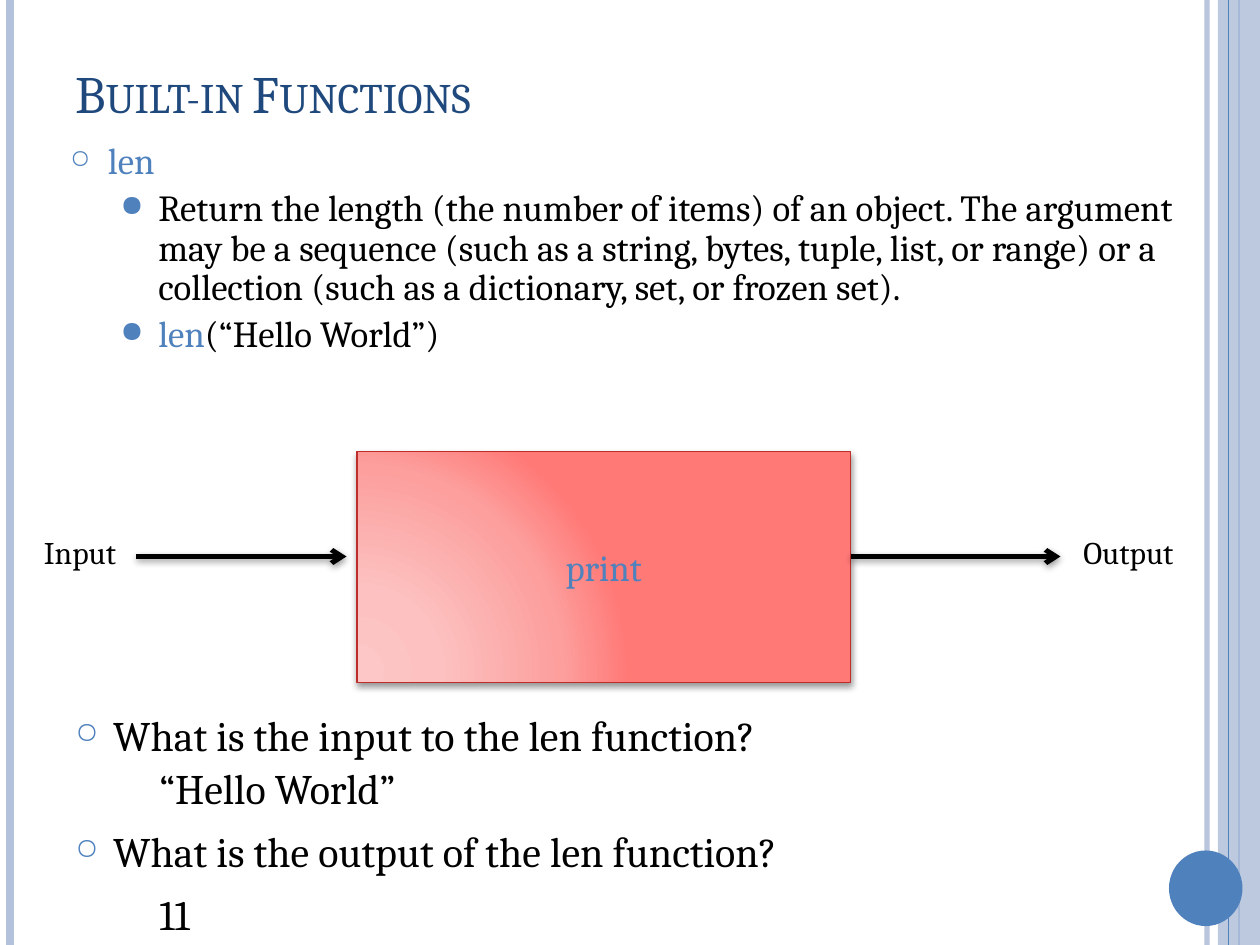
import pptx
import pptx.util
import pptx.dml.color
import pptx.enum.shapes
import pptx.enum.text
import pptx.oxml
import pptx.oxml.ns

Pt = pptx.util.Pt
SHAPES = pptx.enum.shapes.MSO_SHAPE
ANCHOR = pptx.enum.text.MSO_ANCHOR
ALIGN = pptx.enum.text.PP_ALIGN
AUTO_SIZE = pptx.enum.text.MSO_AUTO_SIZE

THEME = {
    "font": "Cambria",
    "title": "1F497D", "accent": "4F81BD", "stripe": "B3C1DB", "text": "000000",
    "box_line": "BD2D29",
    "box_stops": [(0, "FCC7C6"), (30, "FCC1C0"), (75, "FC9F9D"), (100, "FF7977")],
    "title_size": 30, "body_size": 21, "question_size": 24, "label_size": 18,
}
WIDTH, HEIGHT = 720, 540

# Content: a paragraph is (kind, [(text, colour), ...])
TITLE = "Built-in Functions"
BODY = [
    ("topic", [("len", "accent")]),
    ("detail", [("Return the length (the number of items) of an object. The argument "
                 "may be a sequence (such as a string, bytes, tuple, list, or range) or a "
                 "collection (such as a dictionary, set, or frozen set).", "text")]),
    ("detail", [("len", "accent"), ("(“Hello World”)", "text")]),
]
BOX_LABEL = "print"
QUESTIONS = [  # question, top, answer, top, answer width
    ("What is the input to the len function?", 402, "“Hello World”", 432, 252),
    ("What is the output of the len function?", 468, "11", 504, 66),
]
LABELS = [("Input", 18), ("Output", 612)]
ARROWS = [(78, 198), (486, 606)]
ARROW_Y = 318
STRIPES = [  # x, colour, line width, opacity
    (689.75, "stripe", 3, 93), (5.75, "stripe", 4.5, 100), (708, "accent", 1.5, 100),
]

# Paragraph kinds: level, left indent, space before, bullet, bullet size
KINDS = {
    "plain": (0, 0, 0, None, 0),
    "answer": (0, 0, 6, None, 0),
    "topic": (0, 21.6, 6, "○", 70),
    "detail": (1, 50.4, 4.2, "●", 80),
}
HANGING = 21.6


def color(name):
    return pptx.dml.color.RGBColor.from_string(THEME[name])


def xml(markup):
    """Parse DrawingML whose first tag still lacks its namespace."""
    head, rest = markup.split(">", 1)
    close = "/" if head.endswith("/") else ""
    head = head.rstrip("/")
    return pptx.oxml.parse_xml(f"{head} {pptx.oxml.ns.nsdecls('a')}{close}>{rest}")


def set_values(target, values):
    for name, value in values.items():
        setattr(target, name, value)


def set_alpha(fill, percent):
    element = fill._xPr.find(".//" + pptx.oxml.ns.qn("a:srgbClr"))
    element.append(xml(f'<a:alpha val="{percent * 1000}"/>'))


def set_effects(shape, shadow=None):
    """Clear the inherited shadow, or set (opacity, blur, distance) downwards."""
    inner = ""
    if shadow:
        opacity, blur, distance = shadow
        inner = (f'<a:outerShdw blurRad="{Pt(blur)}" dist="{Pt(distance)}" dir="5400000" '
                 f'rotWithShape="0"><a:srgbClr val="{THEME["text"]}">'
                 f'<a:alpha val="{opacity * 1000}"/></a:srgbClr></a:outerShdw>')
    shape._element.spPr.append(xml(f"<a:effectLst>{inner}</a:effectLst>"))


def add_line(shapes, start, end, line_color, width, opacity=100, arrow=False, shadow=None):
    connector = shapes.add_connector(pptx.enum.shapes.MSO_CONNECTOR.STRAIGHT,
                                     *map(Pt, start + end))
    connector.line.color.rgb = color(line_color)
    connector.line.width = Pt(width)
    if opacity < 100:
        set_alpha(connector.line.fill, opacity)
    if arrow:
        connector.line._get_or_add_ln().append(xml('<a:tailEnd type="arrow"/>'))
    set_effects(connector, shadow)


def add_shape(shapes, kind, bounds, fill):
    shape = shapes.add_shape(kind, *map(Pt, bounds))
    shape.fill.solid()
    shape.fill.fore_color.rgb = color(fill)
    shape.line.fill.background()
    shape.shadow.inherit = False
    return shape


def write_text(shape, paragraphs, size, spacing=None, align=None, small_caps=False, **frame_values):
    frame = shape.text_frame
    set_values(frame, {"word_wrap": True, **frame_values})
    for index, (kind, runs) in enumerate(paragraphs):
        paragraph = frame.add_paragraph() if index else frame.paragraphs[0]
        level, left, before, bullet, bullet_size = KINDS[kind]
        set_values(paragraph, {"level": level, "alignment": align,
                               "line_spacing": spacing, "space_before": Pt(before)})
        if bullet:
            properties = paragraph._p.get_or_add_pPr()
            properties.set("marL", str(Pt(left)))
            properties.set("indent", str(Pt(-HANGING)))
            for markup in (f'<a:buClr><a:srgbClr val="{THEME["accent"]}"/></a:buClr>',
                           f'<a:buSzPct val="{bullet_size * 1000}"/>',
                           f'<a:buChar char="{bullet}"/>'):
                properties.append(xml(markup))
        for text, run_color in runs:
            run = paragraph.add_run()
            run.text = text
            set_values(run.font, {"name": THEME["font"], "size": Pt(THEME[size])})
            run.font.color.rgb = color(run_color)
            if small_caps:
                run.font._element.set("cap", "small")


def add_text(shapes, bounds, paragraphs, size, **values):
    write_text(shapes.add_textbox(*map(Pt, bounds)), paragraphs, size, **values)


def add_frame(shapes):
    for x, line_color, width, opacity in STRIPES:
        add_line(shapes, (x, 0), (x, HEIGHT), line_color, width, opacity)
    band = add_shape(shapes, SHAPES.RECTANGLE, (696, 0, 24, HEIGHT), "stripe")
    set_alpha(band.fill, 87)
    add_line(shapes, (702, 0), (702, HEIGHT), "accent", 0.75)
    add_shape(shapes, SHAPES.OVAL, (668, 486, 42, 43.2), "accent")


def add_diagram(shapes):
    box = shapes.add_shape(SHAPES.RECTANGLE, *map(Pt, (204, 258, 282, 132)))
    box.line.color.rgb = color("box_line")
    box.line.width = Pt(1)
    stops = "".join(f'<a:gs pos="{position * 1000}"><a:srgbClr val="{value}"/></a:gs>'
                    for position, value in THEME["box_stops"])
    gradient = xml(f'<a:gradFill rotWithShape="1"><a:gsLst>{stops}</a:gsLst><a:path path="circle">'
                   '<a:fillToRect l="5000" t="100000" r="120000" b="10000"/></a:path></a:gradFill>')
    box._element.spPr.insert(2, gradient)
    set_effects(box, (40, 4, 2))
    write_text(box, [("plain", [(BOX_LABEL, "accent")])], "body_size",
               align=ALIGN.CENTER, vertical_anchor=ANCHOR.MIDDLE)
    for start, end in ARROWS:
        add_line(shapes, (start, ARROW_Y), (end, ARROW_Y), "text", 2.75,
                 arrow=True, shadow=(42, 4, 1.6))
    for text, left in LABELS:
        add_text(shapes, (left, 301, 96, 29), [("plain", [(text, "text")])],
                 "label_size", auto_size=AUTO_SIZE.SHAPE_TO_FIT_TEXT)


def main():
    presentation = pptx.Presentation()
    presentation.slide_width, presentation.slide_height = Pt(WIDTH), Pt(HEIGHT)
    shapes = presentation.slides.add_slide(presentation.slide_layouts[6]).shapes

    # Side stripes and corner disc
    add_frame(shapes)

    # Title and description
    add_text(shapes, (36, 21.6, 624, 62.6), [("plain", [(TITLE, "title")])], "title_size",
             small_caps=True, vertical_anchor=ANCHOR.MIDDLE)
    add_text(shapes, (33, 78, 645, 180), BODY, "body_size", spacing=0.9)

    # Input, function box and output
    add_diagram(shapes.add_group_shape().shapes)

    # Questions with their answers
    for question, question_top, answer, answer_top, answer_width in QUESTIONS:
        add_text(shapes, (36, question_top, 630, 54),
                 [("topic", [(question, "text")])], "question_size")
        add_text(shapes, (84, answer_top, answer_width, 54),
                 [("answer", [(answer, "text")])], "question_size")

    presentation.save("out.pptx")


if __name__ == "__main__":
    main()
